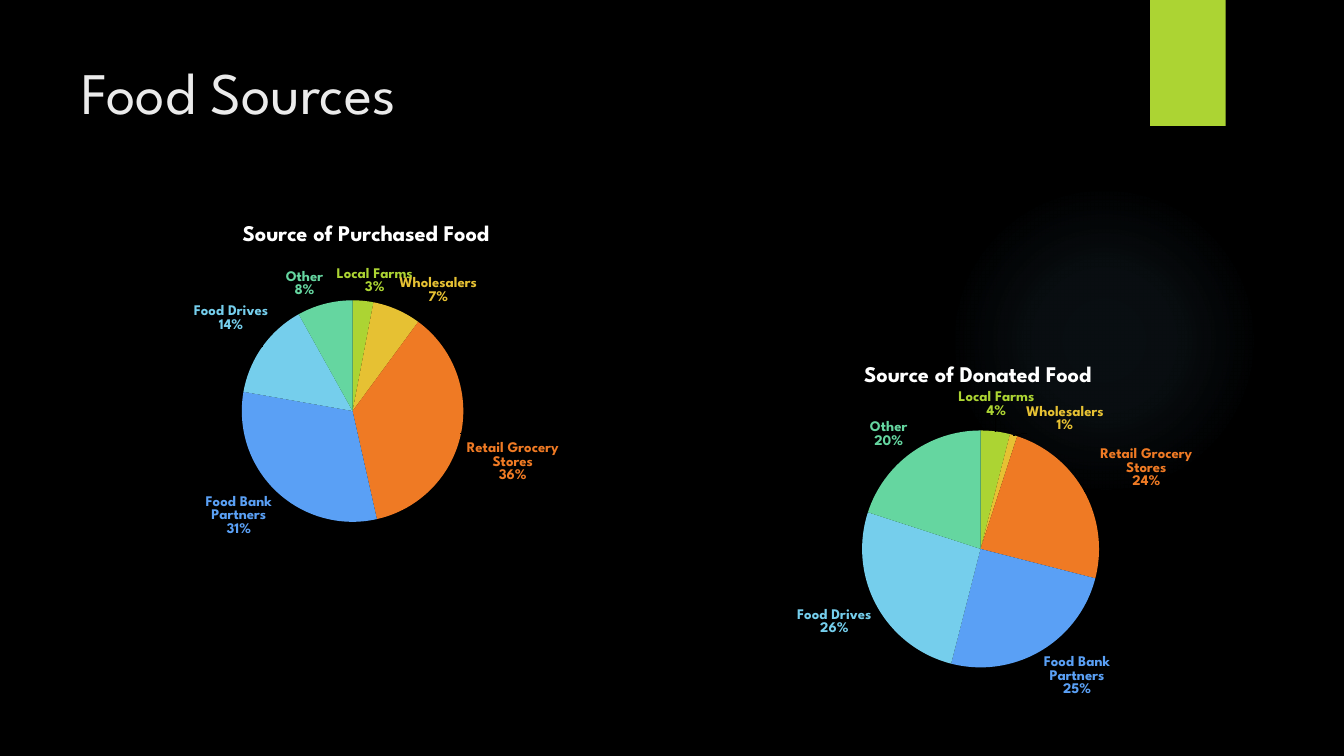
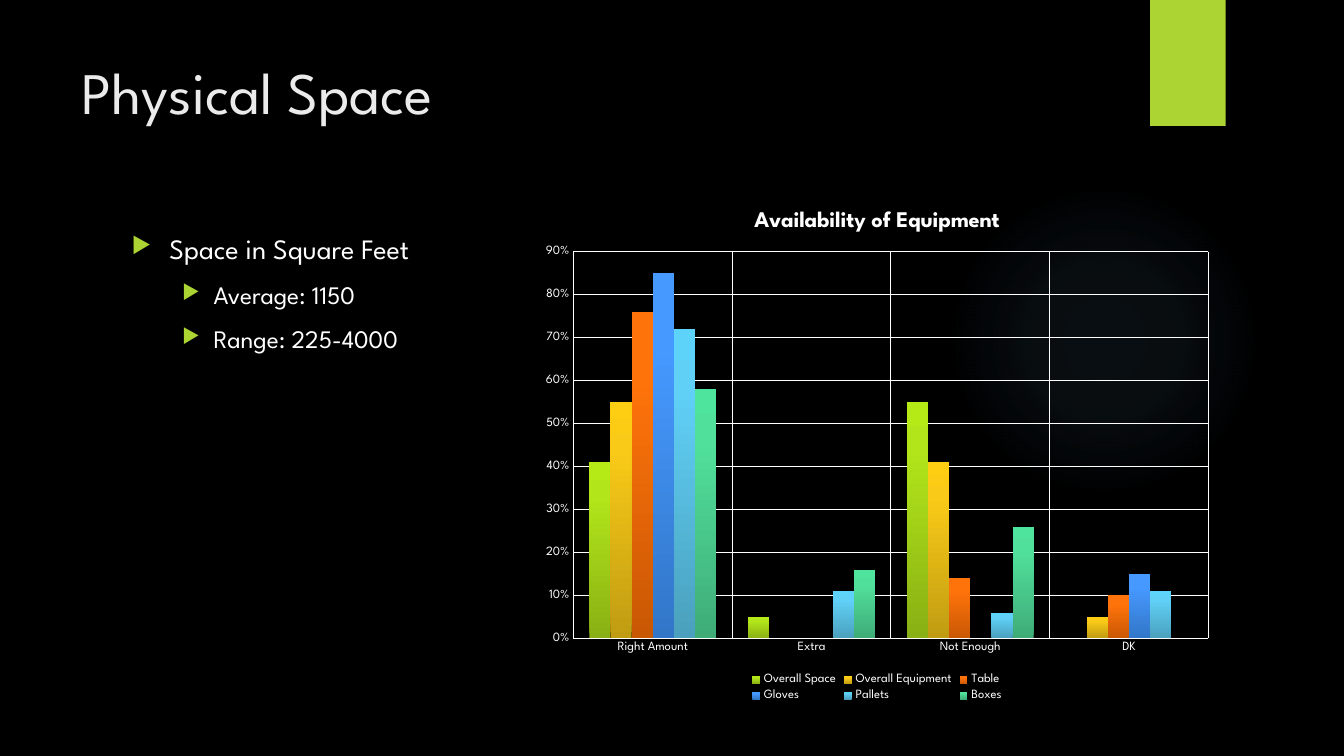
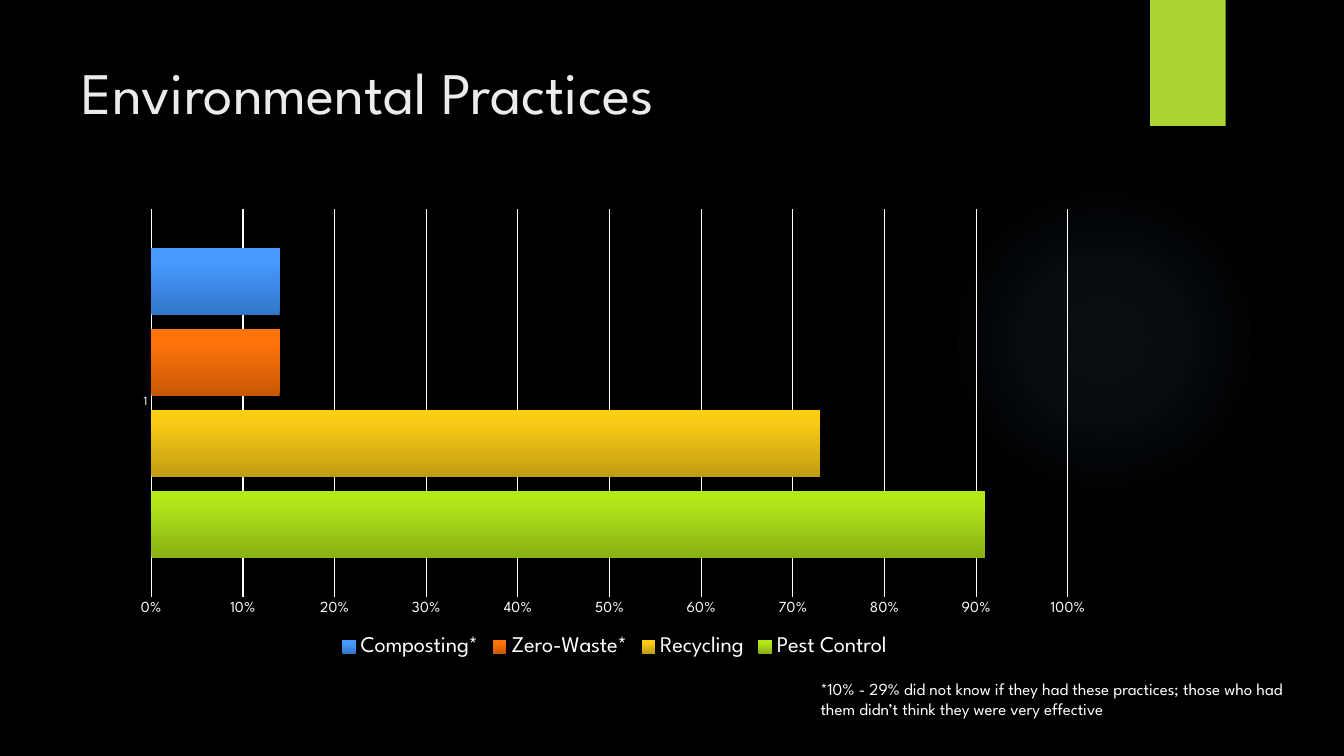
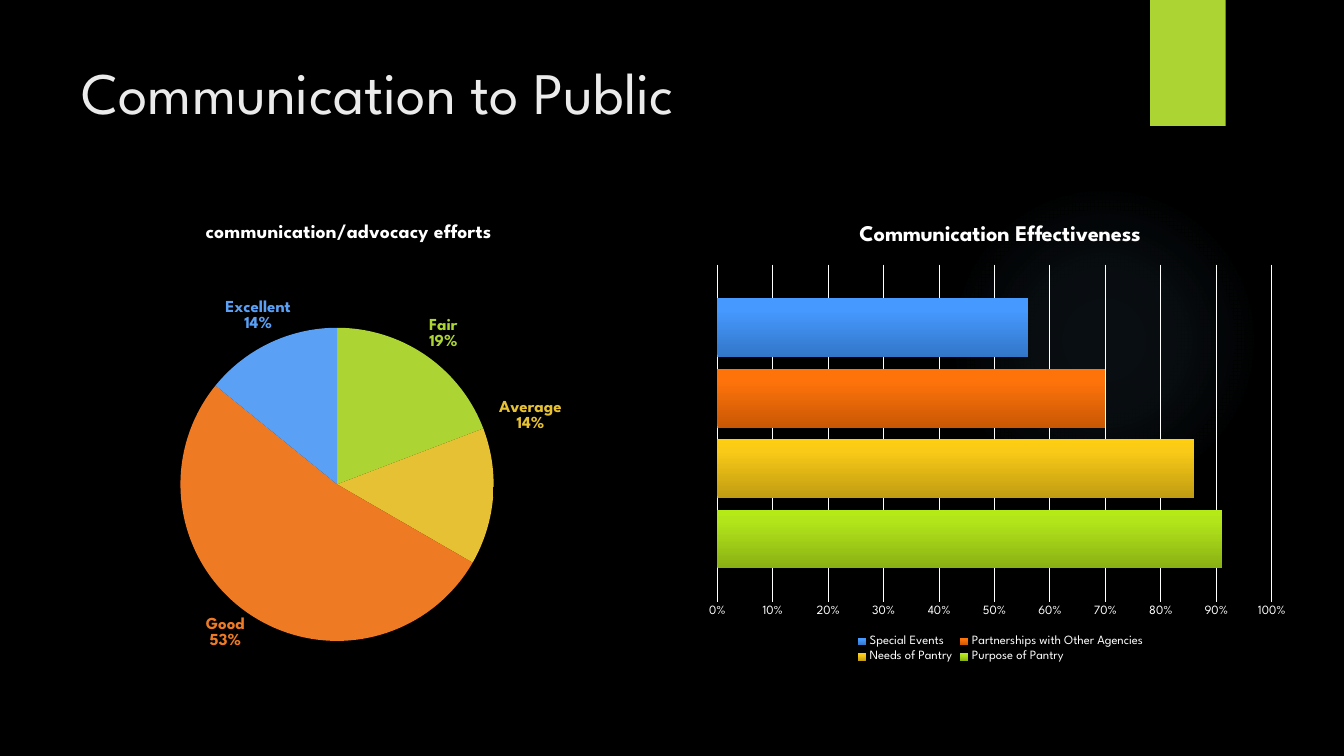
from dataclasses import dataclass

from lxml.etree import SubElement
from pptx import Presentation
from pptx.chart.data import CategoryChartData
from pptx.dml.color import RGBColor
from pptx.enum.chart import XL_CHART_TYPE, XL_LABEL_POSITION, XL_LEGEND_POSITION, XL_TICK_MARK
from pptx.enum.shapes import MSO_SHAPE
from pptx.enum.text import MSO_ANCHOR, MSO_AUTO_SIZE, PP_ALIGN
from pptx.oxml import parse_xml
from pptx.oxml.ns import nsdecls, qn
from pptx.util import Pt


@dataclass(frozen=True)
class Theme:
    font: str = "League Spartan"
    background: str = "000000"
    title: str = "EBEBEB"
    text: str = "FFFFFF"
    accent: str = "ACD433"
    glow: str = "7AC4F0"
    slices: tuple = ("ACD433", "E6C133", "EF7A24", "5AA0F5", "75CEEC", "65D6A0")
    # Dark, main and bright stop of each bar gradient
    bars: tuple = (
        ("89B014", "B2E51A", "B5EA16"), ("C09C12", "F9CA17", "FECE13"),
        ("C95804", "FF730B", "FF730D"), ("3276C8", "4699FF", "479AFF"),
        ("4AA0BD", "60D0F6", "5ED3FA"), ("3FAC78", "51E09C", "4FE49D"),
    )
    title_size: float = 42
    body_sizes: tuple = (20, 18)
    note_size: float = 12
    chart_size: float = 10
    chart_title_size: float = 16
    axis_size: float = 9


theme = Theme()
white = RGBColor.from_string(theme.text)


def write_text(frame, text, *, size, color=theme.text, bold=False, level=None):
    """Write one paragraph; a level makes it a bullet."""
    paragraph = frame.paragraphs[0]
    if paragraph.runs:
        paragraph = frame.add_paragraph()
        paragraph.space_before = Pt(10)
    if level is not None:
        paragraph.level = level
        margin, hanging = ((27, 27), (58.5, 22.5))[level]
        properties = paragraph._p.get_or_add_pPr()
        properties.set("marL", str(Pt(margin)))
        properties.set("indent", str(-Pt(hanging)))
        bullet_color = SubElement(properties, qn("a:buClr"))
        SubElement(bullet_color, qn("a:srgbClr"), val=theme.accent)
        SubElement(properties, qn("a:buSzPct"), val="80000")
        SubElement(properties, qn("a:buChar"), char="▶")
    run = paragraph.add_run()
    run.text = text
    run.font.name = theme.font
    run.font.size = Pt(size)
    run.font.bold = bold
    run.font.color.rgb = RGBColor.from_string(color)
    return paragraph


def set_gradient(properties, stops, direction):
    """Replace a solid fill by stops of (percent, colour, opacity percent)."""
    stop_xml = "".join(
        f'<a:gs pos="{position * 1000}"><a:srgbClr val="{color}">'
        f'<a:alpha val="{opacity * 1000}"/></a:srgbClr></a:gs>'
        for position, color, opacity in stops
    )
    gradient = parse_xml(
        f'<a:gradFill {nsdecls("a")} rotWithShape="1"><a:gsLst>{stop_xml}</a:gsLst>{direction}</a:gradFill>'
    )
    properties.replace(properties.find(qn("a:solidFill")), gradient)


presentation = Presentation()
presentation.slide_width = Pt(960)
presentation.slide_height = Pt(540)
layout = presentation.slide_layouts[5]

# Slides and titles
slides = []
for title_text in ("Food Sources", "Physical Space", "Environmental Practices", "Communication to Public"):
    slide = presentation.slides.add_slide(layout)
    title = slide.shapes.title
    title.left, title.top, title.width, title.height = Pt(51), Pt(36), Pt(741), Pt(110)
    title.text_frame.vertical_anchor = MSO_ANCHOR.TOP
    title.text_frame.auto_size = MSO_AUTO_SIZE.NONE
    paragraph = write_text(title.text_frame, title_text, size=theme.title_size, color=theme.title)
    paragraph.alignment = PP_ALIGN.LEFT
    slides.append(slide)

# Shared background, glow and tab, moved to the layout
layout.background.fill.solid()
layout.background.fill.fore_color.rgb = RGBColor.from_string(theme.background)
layout_tree = layout.placeholders[0].element.getparent()
glow = slides[0].shapes.add_shape(MSO_SHAPE.OVAL, Pt(677.5), Pt(132), Pt(222), Pt(222))
tab = slides[0].shapes.add_shape(MSO_SHAPE.RECTANGLE, Pt(821.5), Pt(0), Pt(54), Pt(90))
for index, shape in enumerate((glow, tab)):
    shape.shadow.inherit = False
    shape.line.fill.background()
    shape.fill.solid()
    shape.fill.fore_color.rgb = RGBColor.from_string(theme.accent)
    layout_tree.insert(2 + index, shape.element)
set_gradient(
    glow.element.spPr,
    [(0, theme.glow, 7), (36, theme.glow, 6), (69, theme.glow, 0)],
    '<a:path path="circle"><a:fillToRect l="50000" t="50000" r="50000" b="50000"/></a:path>',
)

# Text beside and below the charts
space_box = slides[1].shapes.add_textbox(Pt(87), Pt(162), Pt(280), Pt(110))
space_box.text_frame.word_wrap = True
for level, text in ((0, "Space in Square Feet"), (1, "Average: 1150"), (1, "Range: 225-4000")):
    write_text(space_box.text_frame, text, size=theme.body_sizes[level], level=level)

note_box = slides[2].shapes.add_textbox(Pt(579), Pt(481), Pt(350), Pt(36))
note_box.text_frame.word_wrap = True
write_text(
    note_box.text_frame,
    "*10% - 29% did not know if they had these practices; those who had them didn’t think they were very effective",
    size=theme.note_size,
)

# Chart contents; plot areas are fractions of the chart, label shifts too
pie, column, bar = XL_CHART_TYPE.PIE, XL_CHART_TYPE.COLUMN_CLUSTERED, XL_CHART_TYPE.BAR_CLUSTERED
food_sources = ("Local Farms", "Wholesalers", "Retail Grocery Stores", "Food Bank Partners", "Food Drives", "Other")
charts = [
    dict(slide=0, kind=pie, box=(68.5, 147.5, 386, 256.5), plot=(0.27, 0.26, 0.41, 0.62),
         title="Source of Purchased Food", categories=food_sources, label_size=10.5,
         series={"Series 1": (3, 7, 36, 31, 14, 8)},
         shifts={0: (-0.05, 0), 2: (0, 0.02), 4: (0.02, -0.03)}),
    dict(slide=0, kind=pie, box=(505.5, 248.5, 386, 256.5), plot=(0.1, 0.23, 0.81, 0.66),
         title="Source of Donated Food", categories=food_sources, label_size=10.5,
         series={"Series 1": (4, 1, 24, 25, 26, 20)},
         shifts={0: (-0.07, -0.02), 1: (0.02, 0.01), 2: (0.02, 0)}),
    dict(slide=1, kind=column, box=(380, 135.5, 493, 368.5), plot=(0.06, 0.12, 0.92, 0.75),
         title="Availability of Equipment", categories=("Right Amount", "Extra", "Not Enough", "DK"),
         maximum=0.9, gap=150, overlap=0,
         series={
             "Overall Space": (0.41, 0.05, 0.55, 0),
             "Overall Equipment": (0.55, 0, 0.41, 0.05),
             "Table": (0.76, 0, 0.14, 0.1),
             "Gloves": (0.85, 0, 0, 0.15),
             "Pallets": (0.72, 0.11, 0.06, 0.11),
             "Boxes": (0.58, 0.16, 0.26, 0),
         }),
    dict(slide=2, kind=bar, box=(87, 142.5, 704, 330.5), plot=(0.03, 0.02, 0.93, 0.84),
         categories=("1",), maximum=1, gap=115, overlap=-20, axis_size=11, legend_size=16,
         series={"Pest Control": (0.91,), "Recycling": (0.73,), "Zero-Waste*": (0.14,), "Composting*": (0.14,)}),
    dict(slide=3, kind=pie, box=(37.5, 146, 423.5, 339), plot=(0.03, 0.26, 0.9, 0.66),
         title="communication/advocacy efforts", title_size=14, label_size=12,
         categories=("Fair", "Average", "Good", "Excellent"),
         series={"Series 1": (19, 14, 52, 14)},
         shifts={1: (0, -0.17), 3: (0.04, -0.01)}),
    dict(slide=3, kind=bar, box=(499.5, 146, 430.5, 330.5), plot=(0.03, 0.13, 0.92, 0.73),
         title="Communication Effectiveness", categories=("1",), maximum=1, gap=115, overlap=-20,
         hide_categories=True,
         series={
             "Purpose of Pantry": (0.91,),
             "Needs of Pantry": (0.86,),
             "Partnerships with Other Agencies": (0.7,),
             "Special Events": (0.56,),
         }),
]

for content in charts:
    # Data, font and title
    kind = content["kind"]
    data = CategoryChartData()
    data.categories = content["categories"]
    for name, values in content["series"].items():
        data.add_series(name, values)
    box = [Pt(length) for length in content["box"]]
    chart = slides[content["slide"]].shapes.add_chart(kind, *box, data).chart
    chart.font.name = theme.font
    chart.font.size = Pt(theme.chart_size)
    chart.font.color.rgb = white
    chart.has_title = "title" in content
    if chart.has_title:
        write_text(chart.chart_title.text_frame, content["title"],
                   size=content.get("title_size", theme.chart_title_size), bold=True)
    chart.has_legend = kind != pie

    # Plot area
    plot_area = chart.element.find(".//" + qn("c:plotArea"))
    for old_layout in plot_area.findall(qn("c:layout")):
        plot_area.remove(old_layout)
    left, top, width, height = content["plot"]
    plot_area.insert(0, parse_xml(
        f'<c:layout {nsdecls("c")}><c:manualLayout><c:layoutTarget val="inner"/>'
        f'<c:xMode val="edge"/><c:yMode val="edge"/><c:x val="{left}"/><c:y val="{top}"/>'
        f'<c:w val="{width}"/><c:h val="{height}"/></c:manualLayout></c:layout>'
    ))
    plot = chart.plots[0]

    if kind == pie:
        # Slices and their labels in the same colour
        plot.vary_by_categories = True
        for index, color in enumerate(theme.slices[:len(content["categories"])]):
            point = plot.series[0].points[index]
            point.format.fill.solid()
            point.format.fill.fore_color.rgb = RGBColor.from_string(color)
            point.format.line.fill.background()
            label = point.data_label
            label.font.name = theme.font
            label.font.size = Pt(content["label_size"])
            label.font.bold = True
            label.font.color.rgb = RGBColor.from_string(color)
            label.position = XL_LABEL_POSITION.OUTSIDE_END
        for index, label in enumerate(chart.element.iter(qn("c:dLbl"))):
            for flag, value in (("c:showVal", "0"), ("c:showCatName", "1"), ("c:showPercent", "1")):
                label.find(qn(flag)).set("val", value)
            SubElement(label, qn("c:separator")).text = "\n"
            if index in content["shifts"]:
                across, down = content["shifts"][index]
                label.insert(1, parse_xml(
                    f'<c:layout {nsdecls("c")}><c:manualLayout><c:x val="{across}"/>'
                    f'<c:y val="{down}"/></c:manualLayout></c:layout>'
                ))
        continue

    # Bars
    plot.vary_by_categories = False
    plot.gap_width = content["gap"]
    plot.overlap = content["overlap"]
    for series, (dark, main, bright) in zip(plot.series, theme.bars):
        series.format.fill.solid()
        set_gradient(series._element.find(qn("c:spPr")),
                     [(0, dark, 100), (80, main, 100), (100, bright, 100)],
                     '<a:lin ang="16200000" scaled="0"/>')

    # Axes and gridlines
    value_axis, category_axis = chart.value_axis, chart.category_axis
    value_axis.minimum_scale = 0
    value_axis.maximum_scale = content["maximum"]
    value_axis.major_unit = 0.1
    value_axis.tick_labels.number_format = "0%"
    value_axis.tick_labels.number_format_is_linked = False
    value_axis.format.line.fill.background()
    category_axis.format.line.color.rgb = white
    category_axis.format.line.width = Pt(1)
    category_axis.has_major_gridlines = kind == column
    category_axis.visible = not content.get("hide_categories", False)
    axis_sizes = (content.get("axis_size", theme.axis_size), theme.axis_size)
    for axis, size in zip((value_axis, category_axis), axis_sizes):
        axis.major_tick_mark = axis.minor_tick_mark = XL_TICK_MARK.NONE
        axis.tick_labels.font.size = Pt(size)
        axis.tick_labels.font.name = theme.font
        axis.tick_labels.font.color.rgb = white
        if axis.has_major_gridlines:
            axis.major_gridlines.format.line.color.rgb = white
            axis.major_gridlines.format.line.width = Pt(0.75)

    # Legend
    chart.legend.position = XL_LEGEND_POSITION.BOTTOM
    chart.legend.include_in_layout = False
    chart.legend.font.name = theme.font
    chart.legend.font.size = Pt(content.get("legend_size", theme.axis_size))
    chart.legend.font.color.rgb = white

presentation.save("out.pptx")
